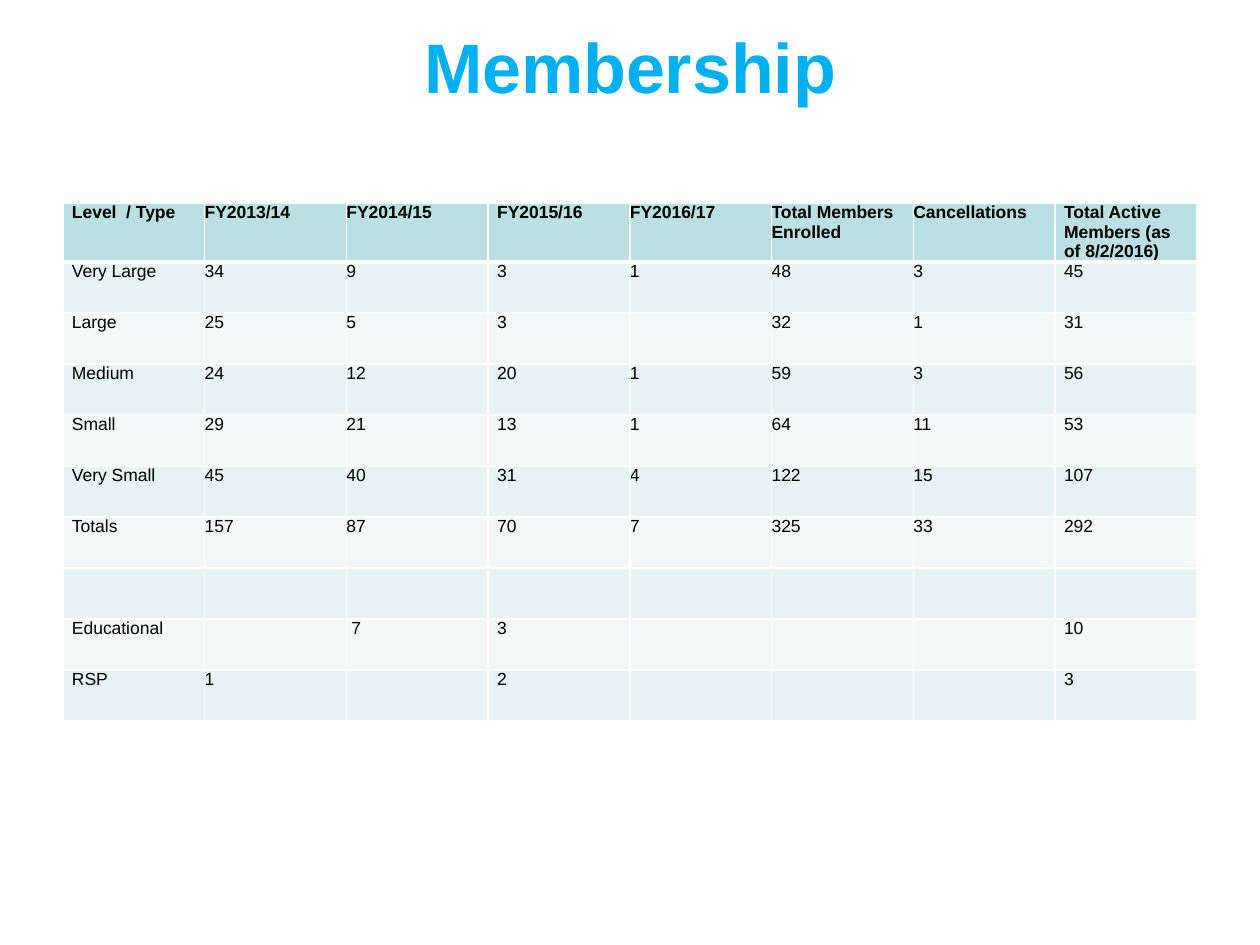
from lxml.etree import SubElement
from pptx import Presentation
from pptx.dml.color import RGBColor
from pptx.enum.text import MSO_ANCHOR, PP_ALIGN
from pptx.oxml.ns import qn
from pptx.util import Pt

BLACK = RGBColor(0x00, 0x00, 0x00)
WHITE = RGBColor(0xFF, 0xFF, 0xFF)
BLUE = RGBColor(0x00, 0xB0, 0xF0)
TEAL = RGBColor(0xBB, 0xE0, 0xE3)
PALE = RGBColor(0xE7, 0xF3, 0xF4)
LIGHT = RGBColor(0xF3, 0xF9, 0xFA)

ROWS = [
    ["Level  / Type", "FY2013/14", "FY2014/15", "FY2015/16", "FY2016/17",
     "Total Members Enrolled", "Cancellations", "Total Active Members (as of 8/2/2016)"],
    ["Very Large", "34", "9", "3", "1", "48", "3", "45"],
    ["Large", "25", "5", "3", "", "32", "1", "31"],
    ["Medium", "24", "12", "20", "1", "59", "3", "56"],
    ["Small", "29", "21", "13", "1", "64", "11", "53"],
    ["Very Small", "45", "40", "31", "4", "122", "15", "107"],
    ["Totals", "157", "87", "70", "7", "325", "33", "292"],
    [""] * 8,
    ["Educational", "", " 7", "3", "", "", "", "10"],
    ["RSP", "1", "", "2", "", "", "", "3"],
]
INSET = {0, 3, 7}


def px(count):
    """Turn slide pixels into EMU."""
    return int(count * 914400 / 126)


def write(frame, text, size=10, color=BLACK, bold=False, align=PP_ALIGN.LEFT, face="Arial"):
    """Put one formatted run into a text frame."""
    para = frame.paragraphs[0]
    para.alignment = align
    run = para.add_run()
    run.text = text
    font = run.font
    font.name, font.size, font.bold = face, Pt(size), bold
    font.color.rgb = color


def edge(cell, side, width, color=WHITE):
    """Draw one border of a table cell."""
    line = SubElement(cell._tc.get_or_add_tcPr(), qn(f"a:ln{side}"), w=str(Pt(width)))
    fill = SubElement(line, qn("a:solidFill"))
    SubElement(fill, qn("a:srgbClr"), val=str(color))


class Page:
    """Holds the style and the current slide."""

    def __init__(self, deck):
        self.slide = deck.slides.add_slide(deck.slide_layouts[5])
        self.bands = (LIGHT, PALE)

    def title(self, text, x, y, w, h):
        """Place and format the slide title."""
        shape = self.slide.shapes.title
        shape.left, shape.top, shape.width, shape.height = map(px, (x, y, w, h))
        frame = shape.text_frame
        frame.vertical_anchor = MSO_ANCHOR.MIDDLE
        write(frame, text, size=40, color=BLUE, bold=True, align=PP_ALIGN.CENTER)

    def table(self, rows, x, y, w, head, step):
        """Add a banded table with a header row."""
        high = head + step * (len(rows) - 1)
        box = map(px, (x, y, w, high))
        grid = self.slide.shapes.add_table(len(rows), len(rows[0]), *box).table
        grid.horz_banding = False
        for r, row in enumerate(rows):
            grid.rows[r].height = px(step if r else head)
            for c, text in enumerate(row):
                self.cell(grid.cell(r, c), text, r, c)

    def cell(self, cell, text, r, c):
        """Format and fill one table cell."""
        cell.margin_left = cell.margin_right = px(9 if c in INSET else 0)
        cell.margin_top = cell.margin_bottom = 0
        for side, thick in (("L", False), ("R", False), ("T", r == 1), ("B", r == 0)):
            edge(cell, side, 3 if thick else 1)
        cell.fill.solid()
        cell.fill.fore_color.rgb = self.bands[r % 2] if r else TEAL
        if text:
            write(cell.text_frame, text, bold=r == 0)


def main():
    """Build the membership slide."""
    deck = Presentation()
    deck.slide_width, deck.slide_height = px(1260), px(945)
    page = Page(deck)
    page.title("Membership", 63, 0, 1134, 130)
    page.table(ROWS, 63, 203, 1134, head=59, step=51)
    deck.save("out.pptx")


if __name__ == "__main__":
    main()
